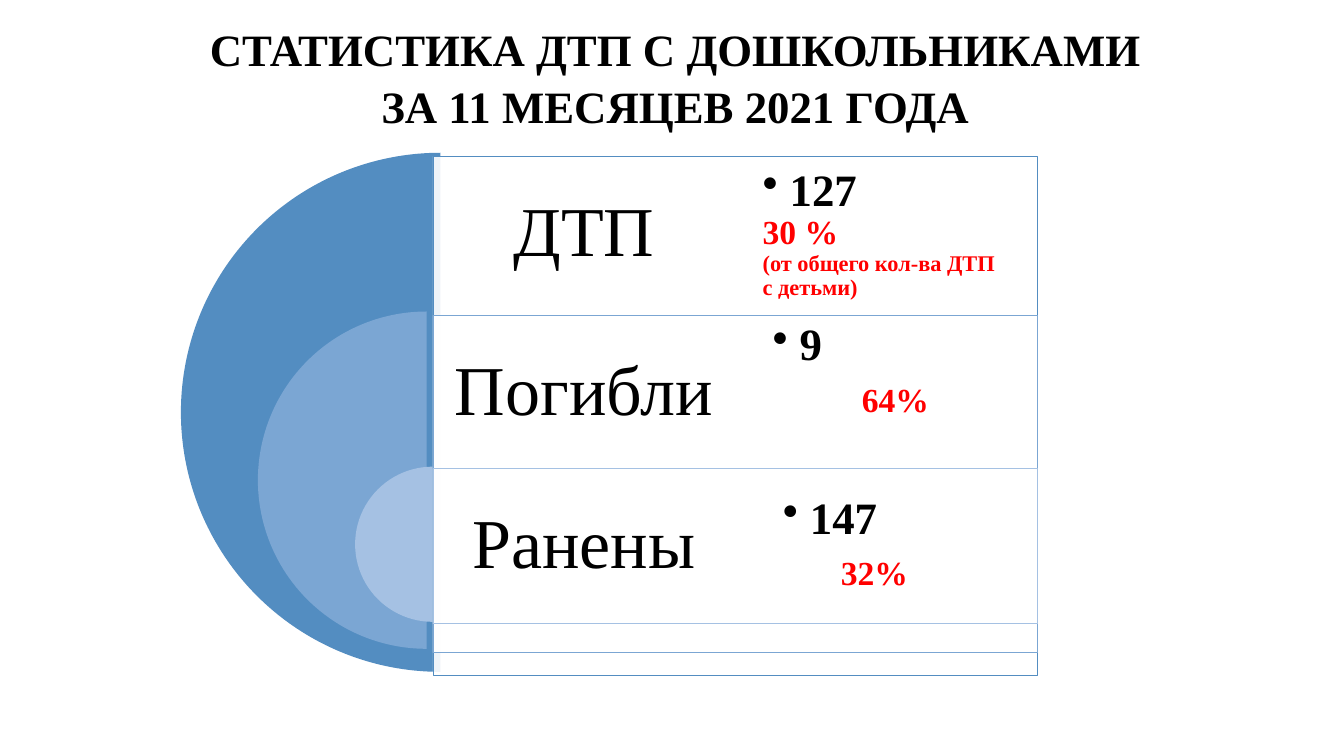
from dataclasses import dataclass

from lxml.etree import SubElement
from pptx import Presentation
from pptx.dml.color import RGBColor
from pptx.enum.shapes import MSO_SHAPE
from pptx.enum.text import MSO_ANCHOR, MSO_AUTO_SIZE, PP_ALIGN
from pptx.oxml.ns import qn
from pptx.util import Cm, Pt

BLACK = RGBColor(0x00, 0x00, 0x00)
WHITE = RGBColor(0xFF, 0xFF, 0xFF)
RED = RGBColor(0xFF, 0x00, 0x00)
DARK_BLUE = RGBColor(0x53, 0x8D, 0xC1)
MEDIUM_BLUE = RGBColor(0x7B, 0xA6, 0xD3)
LIGHT_BLUE = RGBColor(0xA5, 0xC1, 0xE3)

PANEL_LEFT = 10.91
PANEL_WIDTH = 15.24
COLUMN_WIDTH = PANEL_WIDTH / 2
ROW_HEIGHT = 3.91
BULLET_GAP = 0.68


@dataclass
class Line:
    text: str
    size: int
    color: RGBColor = RED
    indent: float = 0
    space_before: int = 0
    bullet: bool = False


@dataclass
class Row:
    label: str
    color: RGBColor
    diameter: float
    circle_left: float
    circle_top: float
    panel_top: float
    value_top: float
    lines: list


ROWS = [
    Row("ДТП", DARK_BLUE, 13.08, 4.56, 3.85, 3.94, 3.94, [
        Line("127", 32, BLACK, bullet=True),
        Line("30 %", 24),
        Line("(от общего кол-ва ДТП с детьми)", 16),
    ]),
    Row("Погибли", MEDIUM_BLUE, 8.5, 6.5, 7.85, 7.95, 7.39, [
        Line("9", 32, BLACK, 0.25, bullet=True),
        Line("64%", 24, indent=2.5, space_before=9),
    ]),
    Row("Ранены", LIGHT_BLUE, 3.91, 8.95, 11.76, 11.81, 11.76, [
        Line("147", 32, BLACK, 0.51, bullet=True),
        Line("32%", 24, indent=1.97, space_before=9),
    ]),
]


class SlideBuilder:
    """Draws elements on one slide in a shared style."""

    font_name = "Times New Roman"

    def __init__(self, slide):
        self.slide = slide

    def style(self, paragraph, size, color, bold):
        for run in paragraph.runs:
            run.font.name = self.font_name
            run.font.size = Pt(size)
            run.font.bold = bold
            run.font.color.rgb = color

    def title(self, text):
        shape = self.slide.shapes.title
        shape.left, shape.top, shape.width, shape.height = Cm(0.18), Cm(0.36), Cm(33.68), Cm(3)
        frame = shape.text_frame
        frame.text = text
        frame.auto_size = MSO_AUTO_SIZE.NONE
        frame.vertical_anchor = MSO_ANCHOR.TOP
        for paragraph in frame.paragraphs:
            paragraph.alignment = PP_ALIGN.CENTER
            paragraph.line_spacing = 1.05
            self.style(paragraph, 32, BLACK, True)

    def shape(self, kind, left, top, width, height, color):
        shape = self.slide.shapes.add_shape(kind, Cm(left), Cm(top), Cm(width), Cm(height))
        shape.shadow.inherit = False
        shape.fill.solid()
        shape.fill.fore_color.rgb = color
        return shape

    def half_circle(self, row):
        shape = self.shape(MSO_SHAPE.PIE, row.circle_left, row.circle_top,
                           row.diameter, row.diameter, row.color)
        shape.adjustments[0], shape.adjustments[1] = 54, 162
        shape.line.fill.background()

    def panel(self, row):
        shape = self.shape(MSO_SHAPE.RECTANGLE, PANEL_LEFT, row.panel_top,
                           PANEL_WIDTH, row.diameter, WHITE)
        shape.line.color.rgb = row.color
        shape.line.width = Pt(0.5)
        fill_color = shape.fill._xPr.find(qn("a:solidFill"))[0]
        SubElement(fill_color, qn("a:alpha"), val="90000")

    def text_frame(self, left, top, inset):
        box = self.slide.shapes.add_textbox(Cm(left), Cm(top), Cm(COLUMN_WIDTH), Cm(ROW_HEIGHT))
        frame = box.text_frame
        frame.word_wrap = True
        frame.vertical_anchor = MSO_ANCHOR.MIDDLE
        frame.margin_left = frame.margin_right = Cm(inset)
        frame.margin_top = frame.margin_bottom = Cm(inset)
        return frame

    def label(self, row):
        frame = self.text_frame(PANEL_LEFT, row.panel_top, 0.53)
        frame.text = row.label
        paragraph = frame.paragraphs[0]
        paragraph.alignment = PP_ALIGN.CENTER
        paragraph.line_spacing = 0.9
        self.style(paragraph, 50, BLACK, False)

    def values(self, row):
        frame = self.text_frame(PANEL_LEFT + COLUMN_WIDTH, row.value_top, 0.69)
        frame.text = "\n".join(line.text for line in row.lines)
        for paragraph, line in zip(frame.paragraphs, row.lines):
            paragraph.line_spacing = 0.9
            if line.space_before:
                paragraph.space_before = Pt(line.space_before)
            self.indent(paragraph, line)
            self.style(paragraph, line.size, line.color, True)

    def indent(self, paragraph, line):
        hanging = BULLET_GAP if line.bullet else 0
        properties = paragraph._p.get_or_add_pPr()
        properties.set("marL", str(Cm(line.indent + hanging)))
        properties.set("indent", str(Cm(-hanging)))
        if line.bullet:
            SubElement(properties, qn("a:buChar"), char="•")


def main():
    presentation = Presentation()
    presentation.slide_width, presentation.slide_height = Cm(33.87), Cm(19.05)
    builder = SlideBuilder(presentation.slides.add_slide(presentation.slide_layouts[5]))
    builder.title("СТАТИСТИКА ДТП С ДОШКОЛЬНИКАМИ\nЗА 11 МЕСЯЦЕВ 2021 ГОДА")
    for row in ROWS:
        builder.half_circle(row)
        builder.panel(row)
        builder.label(row)
    for row in ROWS:
        builder.values(row)
    presentation.save("out.pptx")


if __name__ == "__main__":
    main()
